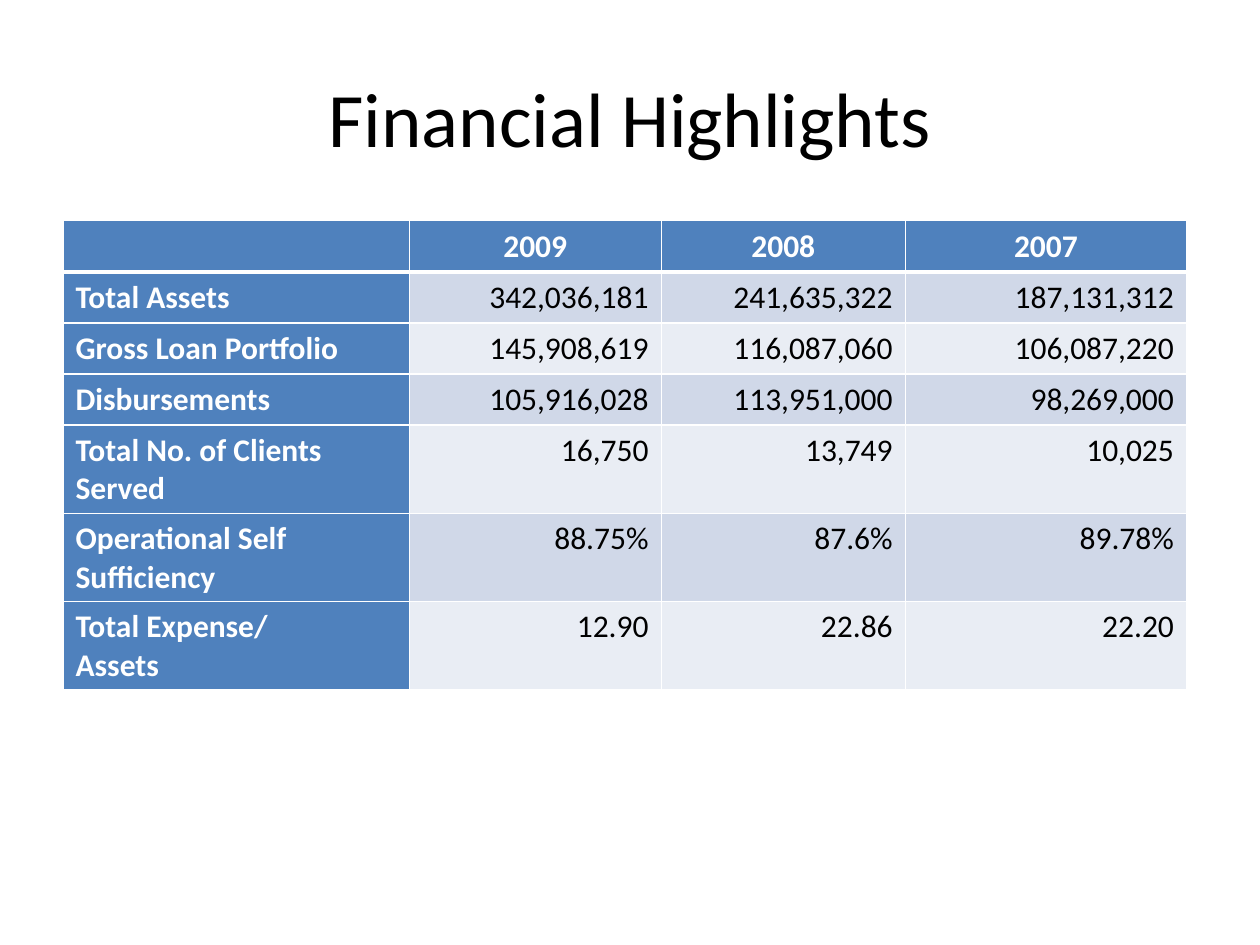
from lxml.etree import SubElement
from pptx import Presentation
from pptx.dml.color import RGBColor
from pptx.enum.text import MSO_ANCHOR, PP_ALIGN
from pptx.oxml.ns import qn
from pptx.util import Cm, Pt

TITLE = "Financial Highlights"
ROWS = [
    ("", "2009", "2008", "2007"),
    ("Total Assets", "342,036,181", "241,635,322", "187,131,312"),
    ("Gross Loan Portfolio", "145,908,619", "116,087,060", "106,087,220"),
    ("Disbursements", "105,916,028", "113,951,000", "98,269,000"),
    ("Total No. of Clients Served", "16,750", "13,749", "10,025"),
    ("Operational Self Sufficiency", "88.75%", "87.6%", "89.78%"),
    ("Total Expense/\nAssets", "12.90", "22.86", "22.20"),
]
COLUMN_WIDTHS = [6.98, 5.08, 4.92, 5.67]
ROW_HEIGHT = 1.03
HEADING_FILL = "4F81BD"
BAND_FILLS = ["E9EDF4", "D0D8E8"]
WHITE, BLACK = "FFFFFF", "000000"


def color(hex_text):
    return RGBColor.from_string(hex_text)


def style(para, size, hex_text, bold, align):
    para.alignment = align
    font = para.font
    font.name, font.size, font.bold = "Calibri", Pt(size), bold
    font.color.rgb = color(hex_text)


def add_borders(cell, widths):
    """Draw white borders; widths maps a side (L, R, T, B) to points."""
    properties = cell._tc.get_or_add_tcPr()
    for position, (side, width) in enumerate(widths.items()):
        line = SubElement(properties, qn(f"a:ln{side}"), w=str(Pt(width)))
        fill = SubElement(line, qn("a:solidFill"))
        SubElement(fill, qn("a:srgbClr"), val=WHITE)
        properties.insert(position, line)  # borders come before the cell fill


def fill_cell(cell, text, row, column):
    heading = row == 0 or column == 0
    if row == 0:
        align = PP_ALIGN.CENTER
    else:
        align = PP_ALIGN.LEFT if column == 0 else PP_ALIGN.RIGHT
    cell.text = text
    for para in cell.text_frame.paragraphs:
        style(para, 18, WHITE if heading else BLACK, heading, align)
    cell.fill.solid()
    cell.fill.fore_color.rgb = color(HEADING_FILL if heading else BAND_FILLS[row % 2])
    add_borders(cell, {"L": 1, "R": 1, "T": 3 if row == 1 else 1, "B": 3 if row == 0 else 1})


def add_title(page):
    box = page.shapes.add_textbox(Cm(1.27), Cm(0.76), Cm(22.86), Cm(3.18))
    frame = box.text_frame
    frame.word_wrap = True
    frame.vertical_anchor = MSO_ANCHOR.MIDDLE
    frame.text = TITLE
    style(frame.paragraphs[0], 44, BLACK, False, PP_ALIGN.CENTER)


def add_highlights(page):
    table = page.shapes.add_table(
        len(ROWS), len(COLUMN_WIDTHS), Cm(1.27), Cm(4.45),
        Cm(sum(COLUMN_WIDTHS)), Cm(ROW_HEIGHT * len(ROWS)),
    ).table
    for column, width in zip(table.columns, COLUMN_WIDTHS):
        column.width = Cm(width)
    for row, texts in enumerate(ROWS):
        table.rows[row].height = Cm(ROW_HEIGHT)
        for column, text in enumerate(texts):
            fill_cell(table.cell(row, column), text, row, column)


def main():
    deck = Presentation()
    deck.slide_width, deck.slide_height = Cm(25.4), Cm(19.05)
    page = deck.slides.add_slide(deck.slide_layouts[6])
    add_title(page)
    add_highlights(page)
    deck.save("out.pptx")


if __name__ == "__main__":
    main()
